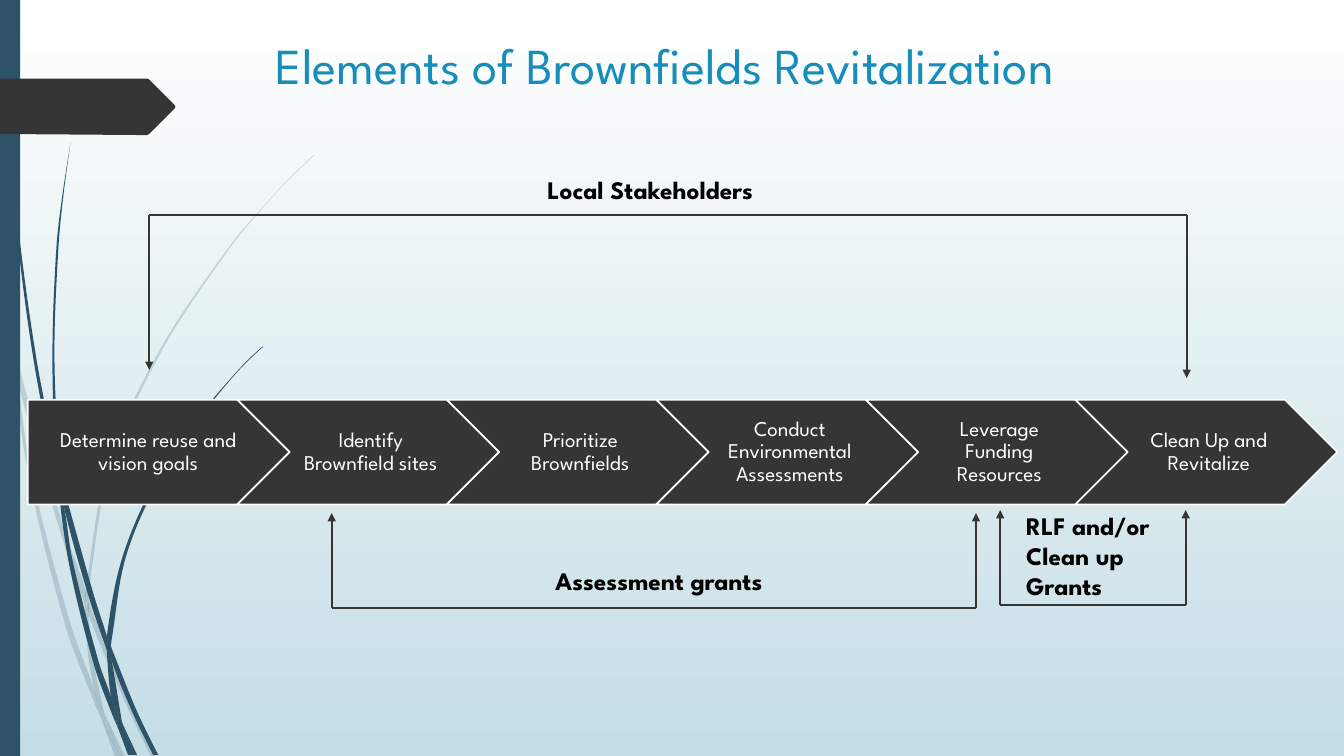
from dataclasses import dataclass

from lxml.etree import SubElement
from pptx import Presentation
from pptx.dml.color import RGBColor
from pptx.enum.shapes import MSO_CONNECTOR, MSO_SHAPE
from pptx.enum.text import MSO_ANCHOR, PP_ALIGN
from pptx.oxml.ns import qn
from pptx.util import Emu, Inches, Pt

COLORS = {"top": "FFFFFF", "bottom": "C5DEE5", "stem": "2E5369", "dark": "353535",
          "title": "178DBB", "white": "FFFFFF", "black": "000000"}
TITLE_FONT = {"name": "League Spartan", "size": Pt(36)}
STEP_FONT = {"name": "League Spartan", "size": Pt(15)}
LABEL_FONT = {"name": "League Spartan", "size": Pt(18), "bold": True}
STEP_FRAME = {"margin_left": Inches(0.07), "margin_right": Inches(0.02),
              "margin_top": Inches(0.04), "margin_bottom": Inches(0.04),
              "vertical_anchor": MSO_ANCHOR.MIDDLE, "word_wrap": True}
STEP_PARAGRAPH = {"alignment": PP_ALIGN.CENTER, "line_spacing": 0.9}

# The slide is a fine grid of equal cells
SLIDE_WIDTH, SLIDE_HEIGHT = Inches(13.33), Inches(7.5)
COLUMNS, ROWS = 1333, 750
STEP_LEFT, STEP_TOP, STEP_PITCH = 27.5, 396.5, 207.8
STEP_WIDTH, STEP_HEIGHT = 260, 104

Point = tuple[float, float]


@dataclass
class Bracket:
    left: float
    right: float
    level: float
    left_tip: float
    right_tip: float


@dataclass
class Label:
    text: str
    left: float
    top: float
    width: float
    height: float
    wrap: bool


# Outlines of the grass stems: pale ones behind, solid ones in front
PALE_STEMS: list[list[Point]] = [
    [(11, 350), (9, 322), (0, 282), (0, 299), (10, 344)],
    [(58, 522), (84, 599), (85, 586), (62, 520), (14, 345), (17, 376)],
    [(92, 607), (88, 596), (88, 610), (123, 694), (150, 751), (155, 751), (127, 692)],
    [(119, 751), (124, 751), (105, 711)],
    [(93, 683), (70, 619), (31, 469), (17, 376), (11, 350), (28, 470), (65, 621),
     (92, 693), (101, 714), (99, 707)],
    [(84, 599), (87, 646), (93, 683), (96, 692), (105, 711), (103, 706), (91, 646),
     (88, 610), (88, 608)],
    [(88, 584), (110, 462), (160, 349), (229, 245), (268, 198), (290, 175), (312, 154),
     (312, 153), (289, 175), (268, 197), (228, 244), (158, 348), (107, 461), (85, 584),
     (85, 586), (88, 596)],
    [(101, 714), (114, 751), (119, 751)],
    [(88, 608), (88, 610), (88, 596), (85, 586), (84, 599)],
    [(96, 692), (93, 683), (99, 707), (101, 714), (119, 751), (105, 711)],
]
SOLID_STEMS: list[list[Point]] = [
    [(7, 110), (17, 233), (33, 355), (56, 477), (57, 481), (55, 457), (55, 453), (36, 355),
     (19, 232), (8, 109), (5, 48), (4, 0), (3, 0), (4, 48)],
    [(88, 592), (106, 645), (106, 633), (106, 631), (93, 590), (60, 472), (64, 505)],
    [(113, 649), (110, 641), (111, 656), (132, 708), (152, 749), (157, 749), (136, 706)],
    [(110, 691), (98, 657), (72, 556), (64, 505), (57, 477), (68, 557), (93, 659),
     (111, 708), (117, 722), (116, 717)],
    [(60, 472), (58, 453), (54, 349), (58, 245), (63, 193), (70, 141), (62, 193),
     (56, 245), (52, 349), (55, 449)],
    [(133, 749), (136, 749), (122, 719)],
    [(57, 477), (64, 505), (60, 472), (55, 449), (55, 453)],
    [(111, 633), (125, 552), (158, 476), (205, 406), (231, 374), (245, 359), (261, 344),
     (260, 344), (245, 358), (231, 373), (204, 405), (156, 474), (122, 551), (106, 631),
     (110, 641)],
    [(117, 722), (127, 749), (131, 749)],
    [(106, 645), (110, 691), (116, 706), (122, 719), (121, 716), (111, 656), (109, 651)],
    [(106, 645), (109, 651), (111, 656), (110, 641), (106, 631), (106, 633)],
    [(116, 706), (110, 691), (116, 717), (117, 722), (130, 749), (133, 749), (122, 719)],
]
TAG: list[Point] = [(173, 108), (148, 133), (146, 134), (136, 134), (0, 133), (0, 78),
                    (136, 78), (146, 78), (148, 79), (173, 104), (174, 106)]
STEPS = ["Determine reuse and vision goals", "Identify Brownfield sites",
         "Prioritize Brownfields", "Conduct Environmental Assessments",
         "Leverage Funding Resources", "Clean Up and Revitalize"]
BRACKETS = [Bracket(148, 1177, 213, 367, 375), Bracket(329, 968, 603, 509, 509),
            Bracket(992, 1176, 600, 506, 506)]
LABELS = [Label("Local Stakeholders", 533, 168, 250, 40, False),
          Label("Assessment grants", 541, 556, 241, 40, False),
          Label("RLF and/or Clean up Grants", 1008, 501, 184, 101, True)]


def col(count: float) -> Emu:
    return Emu(round(SLIDE_WIDTH * count / COLUMNS))


def row(count: float) -> Emu:
    return Emu(round(SLIDE_HEIGHT * count / ROWS))


def rgb(name: str) -> RGBColor:
    return RGBColor.from_string(COLORS[name])


def apply(target, formats: dict) -> None:
    for key, value in formats.items():
        setattr(target, key, value)


def paint(shape, fill: str, outline: str | None = None) -> None:
    shape.shadow.inherit = False
    shape.fill.solid()
    shape.fill.fore_color.rgb = rgb(fill)
    if outline:
        shape.line.color.rgb = rgb(outline)
        shape.line.width = Pt(1.25)
    else:
        shape.line.fill.background()


def add_words(slide, words: str, left: float, top: float, width: float, height: float,
              font: dict, color: str, frame: dict, paragraph: dict) -> None:
    box = slide.shapes.add_textbox(col(left), row(top), col(width), row(height))
    apply(box.text_frame, frame)
    line = box.text_frame.paragraphs[0]
    apply(line, paragraph)
    run = line.add_run()
    run.text = words
    apply(run.font, font)
    run.font.color.rgb = rgb(color)


def add_outline(slide, points: list[Point], fill: str):
    corners = [(col(x), row(y)) for x, y in points]
    builder = slide.shapes.build_freeform(*corners[0])
    builder.add_line_segments(corners[1:] + corners[:1], close=True)
    outline = builder.convert_to_shape()
    paint(outline, fill)
    return outline


def direction(before: complex, here: complex, after: complex) -> complex:
    """Unit tangent of the curve, or zero at a sharp corner."""
    arrive, leave = here - before, after - here
    cosine = (arrive * leave.conjugate()).real / (abs(arrive) * abs(leave))
    return (after - before) / abs(after - before) if cosine > 0.8 else 0j


def add_stem(slide, points: list[Point], opacity: int) -> None:
    stem = add_outline(slide, points, "stem")
    knots = [complex(int(pt.get("x")), int(pt.get("y")))
             for pt in stem.element.iter(qn("a:pt"))][:-1]
    count = len(knots)
    tangents = [direction(knots[i - 1], knots[i], knots[(i + 1) % count])
                for i in range(count)]
    for i, edge in enumerate(list(stem.element.iter(qn("a:lnTo")))):
        start, end = knots[i], knots[(i + 1) % count]
        reach = abs(end - start) / 3
        edge.tag = qn("a:cubicBezTo")
        controls = (start + tangents[i] * reach, end - tangents[(i + 1) % count] * reach)
        for place, control in enumerate(controls):
            SubElement(edge, qn("a:pt"), x=str(round(control.real)), y=str(round(control.imag)))
            edge.insert(place, edge[-1])
    if opacity < 100:
        tint = next(stem.element.spPr.iter(qn("a:srgbClr")))
        SubElement(tint, qn("a:alpha"), val=str(opacity * 1000))


def add_rule(slide, start: Point, end: Point, arrow: bool = False) -> None:
    rule = slide.shapes.add_connector(MSO_CONNECTOR.STRAIGHT, col(start[0]), row(start[1]),
                                      col(end[0]), row(end[1]))
    rule.line.color.rgb = rgb("dark")
    rule.line.width = Pt(1.25)
    if arrow:
        SubElement(rule.line._get_or_add_ln(), qn("a:tailEnd"), type="triangle")
    SubElement(rule._element.spPr, qn("a:effectLst"))


def add_step(slide, index: int, words: str) -> None:
    left = STEP_LEFT + index * STEP_PITCH
    kind, inset, width = (MSO_SHAPE.CHEVRON, 52, 156) if index else (MSO_SHAPE.PENTAGON, 0, 234)
    step = slide.shapes.add_shape(kind, col(left), row(STEP_TOP), col(STEP_WIDTH), row(STEP_HEIGHT))
    paint(step, "dark", "white")
    add_words(slide, words, left + inset, STEP_TOP, width, STEP_HEIGHT,
              STEP_FONT, "white", STEP_FRAME, STEP_PARAGRAPH)


def main() -> None:
    deck = Presentation()
    deck.slide_width, deck.slide_height = SLIDE_WIDTH, SLIDE_HEIGHT
    slide = deck.slides.add_slide(deck.slide_layouts[6])
    # Background
    sky = slide.background.fill
    sky.gradient()
    sky.gradient_angle = 270
    for stop, name, position in zip(sky.gradient_stops, ("top", "bottom"), (0, 1)):
        stop.color.rgb = rgb(name)
        stop.position = position
    # Stems, side band and tag
    for stems, opacity in ((PALE_STEMS, 20), (SOLID_STEMS, 100)):
        for points in stems:
            add_stem(slide, points, opacity)
    band = slide.shapes.add_shape(MSO_SHAPE.RECTANGLE, 0, 0, col(20), row(ROWS))
    paint(band, "stem")
    add_outline(slide, TAG, "dark")
    # Title and process steps
    add_words(slide, "Elements of Brownfields Revitalization", 263.5, 29, 975, 140,
              TITLE_FONT, "title", {"word_wrap": True}, {})
    for index, words in enumerate(STEPS):
        add_step(slide, index, words)
    # Brackets and their labels
    for bracket in BRACKETS:
        left, right = (bracket.left, bracket.level), (bracket.right, bracket.level)
        add_rule(slide, left, right)
        add_rule(slide, left, (bracket.left, bracket.left_tip), arrow=True)
        add_rule(slide, right, (bracket.right, bracket.right_tip), arrow=True)
    for label in LABELS:
        add_words(slide, label.text, label.left, label.top, label.width, label.height,
                  LABEL_FONT, "black", {"word_wrap": label.wrap}, {})
    deck.save("out.pptx")


if __name__ == "__main__":
    main()
